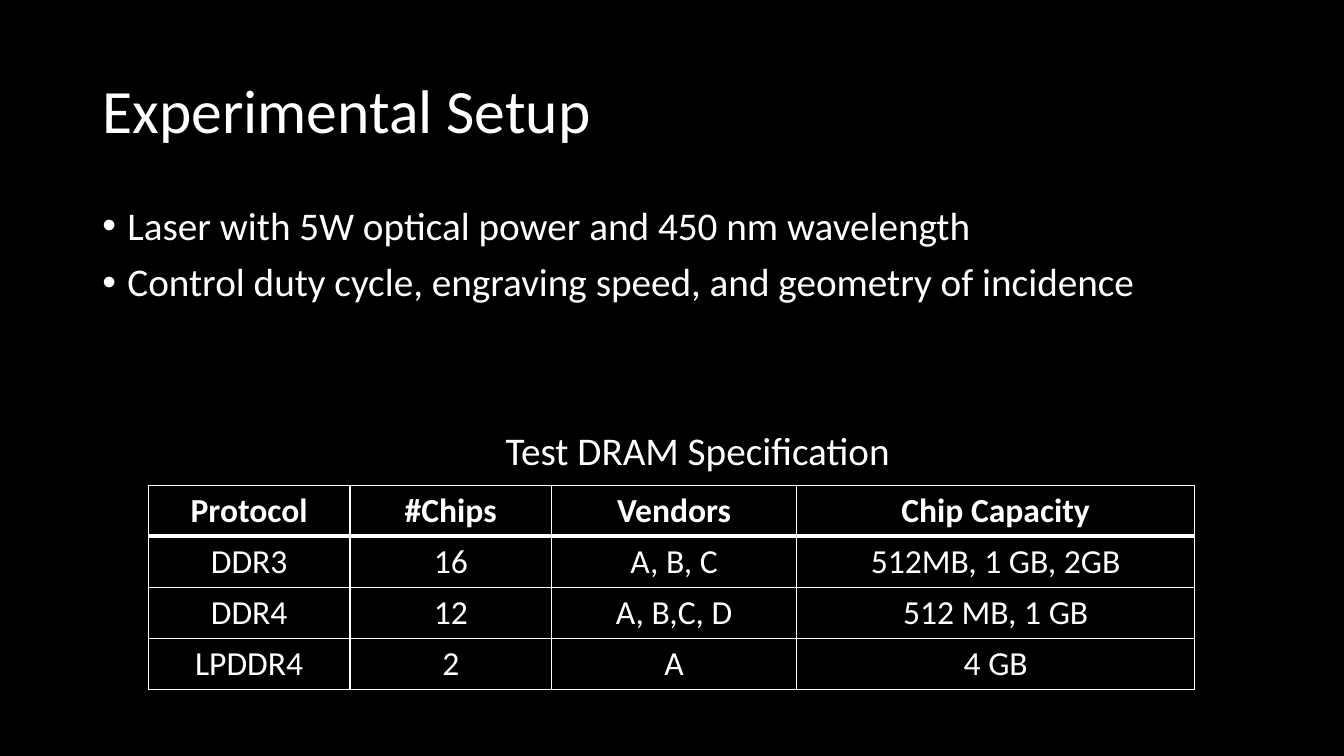
from lxml.etree import SubElement
from pptx import Presentation
from pptx.dml.color import RGBColor
from pptx.enum.text import MSO_ANCHOR as Anchor, PP_ALIGN as Align
from pptx.oxml.ns import qn
from pptx.util import Pt

FONT = "Calibri"
BLACK, WHITE = "000000", "FFFFFF"
MARGIN, CONTENT_WIDTH = 66, 828
BODY_SIZE, CELL_SIZE = 28, 24
COLUMN_WIDTHS = [144, 144, 175, 284.5]
ROW_HEIGHT = 36.5

SETUP_POINTS = [
    "Laser with 5W optical power and 450 nm wavelength",
    "Control duty cycle, engraving speed, and geometry of incidence",
]
DRAM_ROWS = [
    ["Protocol", "#Chips", "Vendors", "Chip Capacity"],
    ["DDR3", "16", "A, B, C", "512MB, 1 GB, 2GB"],
    ["DDR4", "12", "A, B,C, D", "512 MB, 1 GB"],
    ["LPDDR4", "2", "A", "4 GB"],
]


def paint(fill, color):
    fill.solid()
    fill.fore_color.rgb = RGBColor.from_string(color)


def format_paragraph(paragraph, size, align=Align.LEFT, bold=False):
    paragraph.alignment = align
    for run in paragraph.runs:
        run.font.name = FONT
        run.font.size = Pt(size)
        run.font.bold = bold
        paint(run.font.fill, WHITE)


def add_title(slide, text):
    title = slide.shapes.title
    title.left, title.top = Pt(MARGIN), Pt(28.75)
    title.width, title.height = Pt(CONTENT_WIDTH), Pt(104.5)
    frame = title.text_frame
    frame.text = text
    frame.vertical_anchor = Anchor.MIDDLE
    heading = frame.paragraphs[0]
    heading.line_spacing = 0.9
    format_paragraph(heading, 44)


def add_lines(slide, lines, left, top, width, height):
    """Add a text box with one body paragraph per line and return the paragraphs."""
    frame = slide.shapes.add_textbox(Pt(left), Pt(top), Pt(width), Pt(height)).text_frame
    frame.word_wrap = True
    frame.text = "\n".join(lines)
    for paragraph in frame.paragraphs:
        paragraph.line_spacing = 0.9
        paragraph.space_before = Pt(10)
        format_paragraph(paragraph, BODY_SIZE)
    return frame.paragraphs


def add_bullet(paragraph):
    properties = paragraph._p.get_or_add_pPr()
    properties.set("marL", str(Pt(18)))
    properties.set("indent", str(Pt(-18)))
    SubElement(properties, qn("a:buFont"), typeface="Arial")
    SubElement(properties, qn("a:buChar"), char="•")


def add_border(cell, side, width):
    line = SubElement(cell._tc.get_or_add_tcPr(), qn(f"a:ln{side}"), w=str(Pt(width)))
    solid = SubElement(line, qn("a:solidFill"))
    SubElement(solid, qn("a:srgbClr"), val=WHITE)


def add_spec_table(slide, rows, left, top):
    table = slide.shapes.add_table(
        len(rows), len(COLUMN_WIDTHS), Pt(left), Pt(top),
        Pt(sum(COLUMN_WIDTHS)), Pt(ROW_HEIGHT * len(rows)),
    ).table
    for column, width in zip(table.columns, COLUMN_WIDTHS):
        column.width = Pt(width)
    for r, values in enumerate(rows):
        table.rows[r].height = Pt(ROW_HEIGHT)
        borders = {"L": 1, "R": 1, "T": 3 if r == 1 else 1, "B": 3 if r == 0 else 1}
        for c, value in enumerate(values):
            cell = table.cell(r, c)
            cell.text_frame.text = value
            format_paragraph(cell.text_frame.paragraphs[0], CELL_SIZE, Align.CENTER, bold=r == 0)
            for side, width in borders.items():
                add_border(cell, side, width)
            paint(cell.fill, BLACK)


def main():
    deck = Presentation()
    deck.slide_width, deck.slide_height = Pt(960), Pt(540)
    slide = deck.slides.add_slide(deck.slide_layouts[5])
    paint(slide.background.fill, BLACK)
    add_title(slide, "Experimental Setup")
    for point in add_lines(slide, SETUP_POINTS, MARGIN, 144, CONTENT_WIDTH, 80):
        add_bullet(point)
    add_lines(slide, ["Test DRAM Specification"], 354, 304.5, 300, 38)
    add_spec_table(slide, DRAM_ROWS, 106, 346.5)
    deck.save("out.pptx")


if __name__ == "__main__":
    main()
